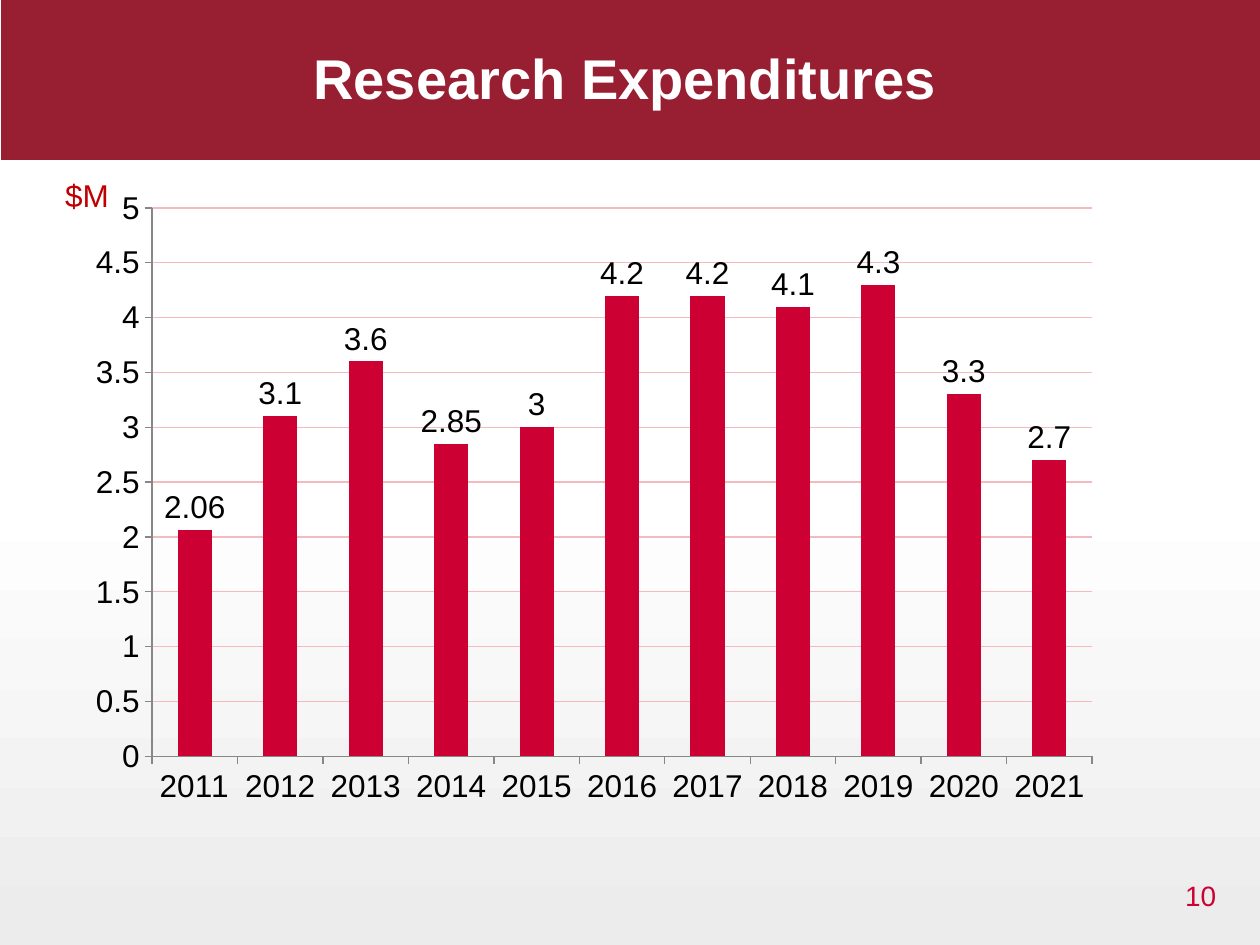
import pptx
import pptx.chart.data
import pptx.dml.color
import pptx.enum.chart
import pptx.enum.shapes
import pptx.enum.text
import pptx.oxml
import pptx.oxml.ns
import pptx.util

Pt = pptx.util.Pt
ALIGN = pptx.enum.text.PP_ALIGN
CHART = pptx.enum.chart
COLORS = {
    "band": "981E32", "bar": "CC0033", "unit": "C00000", "grid": "F5BABD",
    "axis": "878787", "text": "000000", "white": "FFFFFF", "grey": "ECECEC",
}
SPEND = {
    "2011": 2.06, "2012": 3.1, "2013": 3.6, "2014": 2.85, "2015": 3, "2016": 4.2,
    "2017": 4.2, "2018": 4.1, "2019": 4.3, "2020": 3.3, "2021": 2.7,
}
PLOT = {"x": 0.073, "y": 0.129, "w": 0.829, "h": 0.768}


def tint(name):
    """Return the named colour."""
    return pptx.dml.color.RGBColor.from_string(COLORS[name])


def style(font, size, color, bold=False):
    """Format a font."""
    font.name, font.size, font.bold = "Arial", Pt(size), bold
    font.color.rgb = tint(color)


def write(slide, box, text, size=18, color="text", bold=False,
          align=ALIGN.LEFT, wrap=True, space=1.0):
    """Add a text box with one formatted line."""
    frame = slide.shapes.add_textbox(*map(Pt, box)).text_frame
    frame.word_wrap = wrap
    line = frame.paragraphs[0]
    line.alignment, line.line_spacing = align, space
    run = line.add_run()
    run.text = text
    style(run.font, size, color, bold)


def paint(slide):
    """Fill the background with a grey to white gradient."""
    fill = slide.background.fill
    fill.gradient()
    fill.gradient_angle = 90
    for stop, (place, name) in zip(fill.gradient_stops, ((0.01, "grey"), (0.48, "white"))):
        stop.position, stop.color.rgb = place, tint(name)


def band(slide, box):
    """Draw the band behind the title."""
    shape = slide.shapes.add_shape(pptx.enum.shapes.MSO_SHAPE.RECTANGLE, *map(Pt, box))
    shape.shadow.inherit = False
    shape.fill.solid()
    shape.fill.fore_color.rgb = tint("band")
    shape.line.fill.background()


def title(slide, box):
    """Place the title on its band."""
    left, top, width, height = box
    write(slide, (left + 155.5, top + 33, 402, 56), "Research Expenditures",
          size=32, color="white", bold=True, align=ALIGN.CENTER, space=0.9)


def frame(chart):
    """Fix the inner plot area and clear the chart fill."""
    space = pptx.oxml.ns.nsdecls("c", "a")
    sizes = "".join(f'<c:{key} val="{size}"/>' for key, size in PLOT.items())
    plot = chart._chartSpace.chart.plotArea
    for old in plot.findall(pptx.oxml.ns.qn("c:layout")):
        plot.remove(old)
    plot.insert(0, pptx.oxml.parse_xml(
        f'<c:layout {space}><c:manualLayout><c:layoutTarget val="inner"/>'
        f'<c:xMode val="edge"/><c:yMode val="edge"/>{sizes}</c:manualLayout></c:layout>'))
    chart._chartSpace.chart.addnext(pptx.oxml.parse_xml(
        f'<c:spPr {space}><a:noFill/><a:ln><a:noFill/></a:ln></c:spPr>'))


def graph(slide, box):
    """Add the column chart of yearly spending."""
    data = pptx.chart.data.CategoryChartData()
    data.categories = list(SPEND)
    data.add_series("Series 1", list(SPEND.values()))
    chart = slide.shapes.add_chart(
        CHART.XL_CHART_TYPE.COLUMN_CLUSTERED, *map(Pt, box), data).chart
    chart.has_legend = chart.has_title = False
    style(chart.font, 18, "text")
    frame(chart)
    for axis in (chart.category_axis, chart.value_axis):
        axis.major_tick_mark = CHART.XL_TICK_MARK.OUTSIDE
        axis.format.line.color.rgb = tint("axis")
        style(axis.tick_labels.font, 18, "text")
    axis = chart.value_axis
    axis.minimum_scale, axis.maximum_scale, axis.major_unit = 0, 5, 0.5
    axis.has_major_gridlines = True
    axis.major_gridlines.format.line.color.rgb = tint("grid")
    axis.major_gridlines.format.line.width = Pt(0.75)
    plot = chart.plots[0]
    plot.gap_width, plot.vary_by_categories = 150, False
    fill = plot.series[0].format.fill
    fill.solid()
    fill.fore_color.rgb = tint("bar")
    plot.has_data_labels = True
    labels = plot.data_labels
    labels.show_value = True
    labels.position = CHART.XL_LABEL_POSITION.OUTSIDE_END
    style(labels.font, 18, "text")


def main():
    """Build and save the slide."""
    deck = pptx.Presentation()
    deck.slide_width, deck.slide_height = Pt(720), Pt(540)
    slide = deck.slides.add_slide(deck.slide_layouts[6])
    head = (0.7, -7.2, 719.3, 98.6)
    paint(slide)
    band(slide, head)
    graph(slide, (39.6, 66.2, 648, 408.2))
    title(slide, head)
    write(slide, (30.2, 97.2, 39.6, 28.8), "$M", color="unit", wrap=False)
    write(slide, (534.2, 498.2, 167.8, 37.4), "10", size=16, color="bar", align=ALIGN.RIGHT)
    deck.save("out.pptx")


if __name__ == "__main__":
    main()
